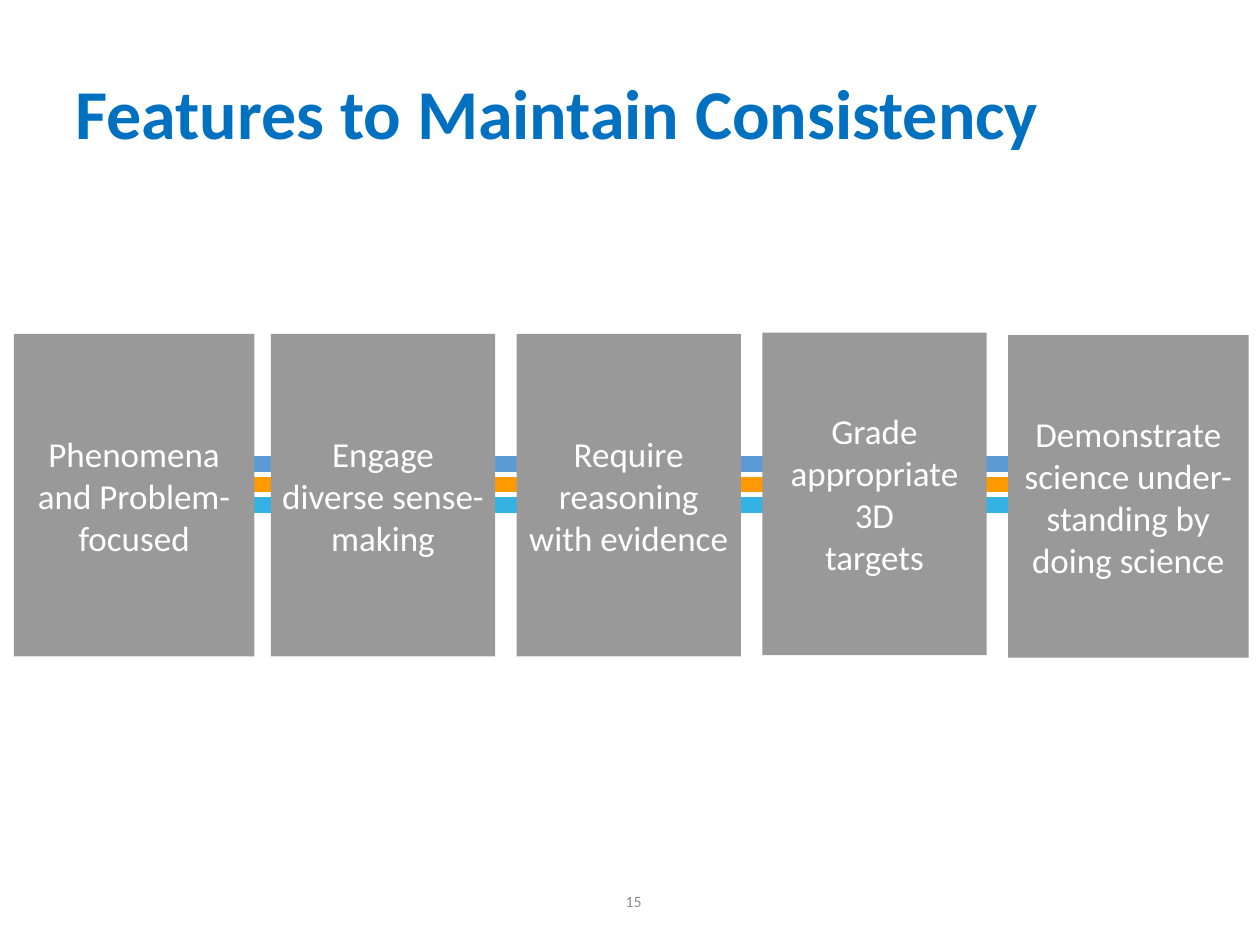
from lxml import etree
from pptx import Presentation
from pptx import util as u
from pptx.dml.color import RGBColor
from pptx.enum import shapes, text
from pptx.oxml.ns import qn

TITLE_BLUE = RGBColor(0x00, 0x70, 0xC0)
ORANGE = RGBColor(0xFF, 0x99, 0x00)
CYAN = RGBColor(0x34, 0xB2, 0xE3)
BLUE = RGBColor(0x5B, 0x9B, 0xD5)
BOX_GRAY = RGBColor(0x99, 0x99, 0x99)
NUMBER_GRAY = RGBColor(0x8C, 0x8C, 0x8C)
WHITE = RGBColor(0xFF, 0xFF, 0xFF)


def write(shape, lines, size, color, alignment, bold=False):
    frame = shape.text_frame
    frame.word_wrap = True
    frame.vertical_anchor = text.MSO_ANCHOR.MIDDLE
    frame.text = "\n".join(lines)
    for paragraph in frame.paragraphs:
        paragraph.alignment = alignment
        paragraph.font.name = "Calibri"
        paragraph.font.size = u.Pt(size)
        paragraph.font.bold = bold
        paragraph.font.color.rgb = color


presentation = Presentation()
presentation.slide_width = u.Inches(10)
presentation.slide_height = u.Inches(7.5)
slide = presentation.slides.add_slide(presentation.slide_layouts[6])

# Page number
number = slide.shapes.add_textbox(u.Inches(2.94), u.Inches(6.95), u.Inches(2.25), u.Inches(0.4))
write(number, ["15"], 9, NUMBER_GRAY, text.PP_ALIGN.RIGHT)

# Three parallel bands behind the boxes, each one step down and to the right
BAND_LEFT, BAND_TOP, BAND_LENGTH, BAND_STEP = 0.51, 3.68, 8.76, 0.165
for step, color in ((2, CYAN), (1, ORANGE), (0, BLUE)):
    # The orange band starts furthest right
    left = BAND_LEFT + {0: 0, 1: 2, 2: 1}[step] * BAND_STEP
    top = BAND_TOP + step * BAND_STEP
    band = slide.shapes.add_connector(
        shapes.MSO_CONNECTOR.STRAIGHT, u.Inches(left), u.Inches(top),
        u.Inches(left + BAND_LENGTH), u.Inches(top))
    band.line.color.rgb = color
    band.line.width = u.Pt(9)
    etree.SubElement(band._element.spPr, qn("a:effectLst"))

# Five feature boxes on an even pitch; the outer two are wider
FIRST_COLUMN, PITCH, BOX_HEIGHT = 0.2, 1.95, 2.56
NARROW, WIDE = 1.78, 1.91
features = [
    (2.65, WIDE, ["Phenomena and Problem-", "focused"]),
    (2.65, NARROW, ["Engage diverse sense-", "making"]),
    (2.65, NARROW, ["Require reasoning with evidence"]),
    (2.64, NARROW, ["Grade", "appropriate 3D", "targets"]),
    (2.66, WIDE, ["Demonstrate science under-", "standing by doing science"]),
]
for column, (top, width, lines) in enumerate(features):
    left = FIRST_COLUMN + column * PITCH
    if column == 0:
        left -= 0.09  # the first box grows toward the slide's edge
    box = slide.shapes.add_shape(
        shapes.MSO_SHAPE.RECTANGLE, u.Inches(left), u.Inches(top),
        u.Inches(width), u.Inches(BOX_HEIGHT))
    box.shadow.inherit = False
    box.fill.solid()
    box.fill.fore_color.rgb = BOX_GRAY
    box.line.fill.background()
    frame = box.text_frame
    frame.margin_left = frame.margin_right = u.Inches(0.07)
    frame.margin_top = frame.margin_bottom = u.Inches(0.04)
    write(box, lines, 20, WHITE, text.PP_ALIGN.CENTER)

# Title
title = slide.shapes.add_textbox(u.Inches(0.5), u.Inches(0.3), u.Inches(9), u.Inches(1.25))
write(title, ["Features to Maintain Consistency"], 40, TITLE_BLUE, text.PP_ALIGN.LEFT, bold=True)
title.text_frame.paragraphs[0].line_spacing = 0.9

presentation.save("out.pptx")
